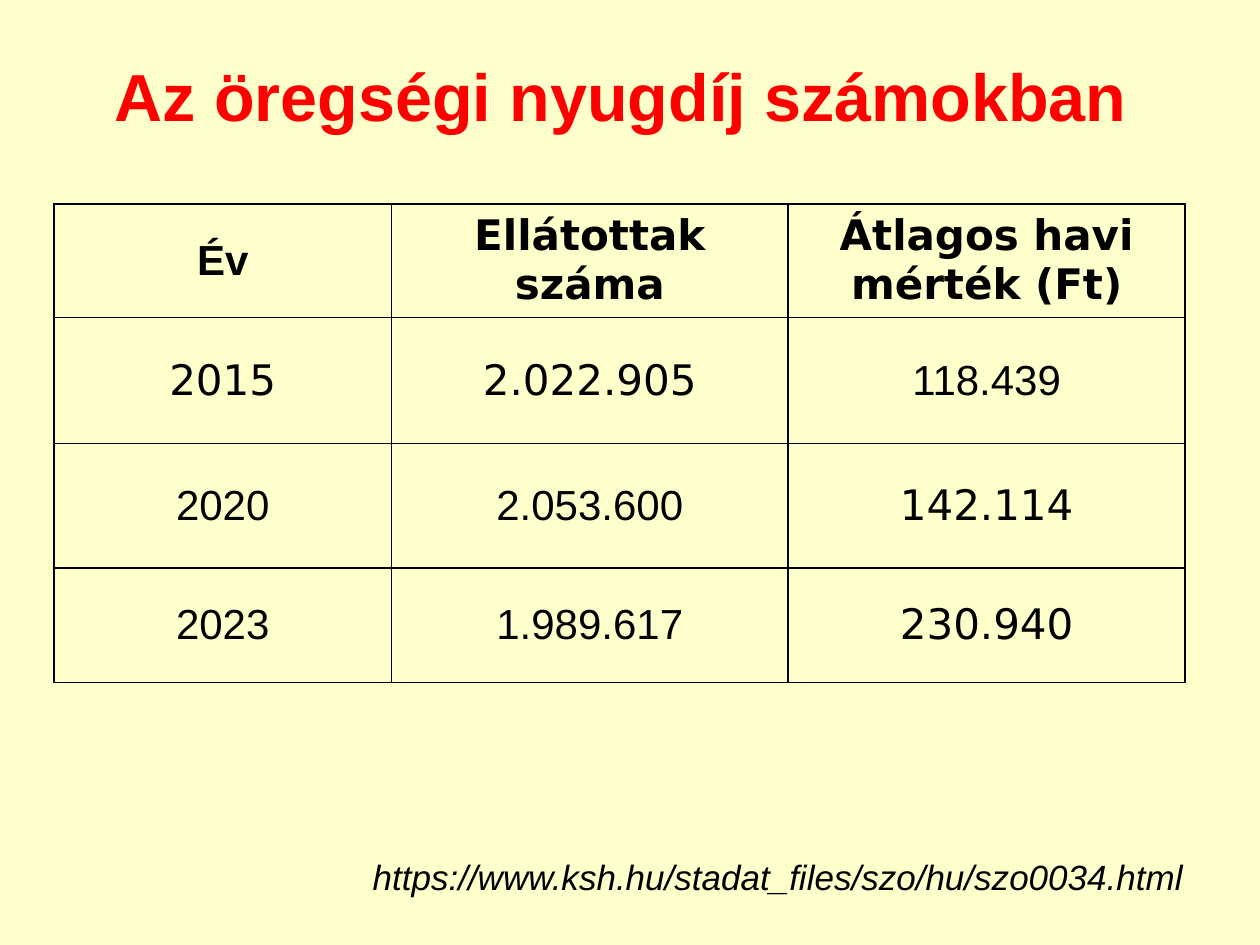
from lxml import etree
from pptx import Presentation
from pptx.dml.color import RGBColor
from pptx.enum.text import MSO_ANCHOR, PP_ALIGN
from pptx.oxml.ns import qn
from pptx.util import Cm, Pt

MIDDLE = MSO_ANCHOR.MIDDLE
CENTER, RIGHT = PP_ALIGN.CENTER, PP_ALIGN.RIGHT
TITLE_ONLY = 5
SANS, WIDE = "Arial", "DejaVu Sans"
COLORS = {"paper": "FFFFCC", "title": "FF0000", "ink": "000000"}
LEFT = 1.09
COLS = [6.8, 8, 8]
ROWS = [2.29, 2.54, 2.51, 2.31]
DATA = [
    [("Év", SANS), ("Ellátottak száma", WIDE), ("Átlagos havi mérték (Ft)", WIDE)],
    [("2015", WIDE), ("2.022.905", WIDE), ("118.439", SANS)],
    [("2020", SANS), ("2.053.600", SANS), ("142.114", WIDE)],
    [("2023", SANS), ("1.989.617", SANS), ("230.940", WIDE)],
]


class Deck:
    def __init__(self):
        self.file = Presentation()
        self.file.slide_width, self.file.slide_height = Cm(25.4), Cm(19.05)
        self.slide = self.file.slides.add_slide(self.file.slide_layouts[TITLE_ONLY])
        fill = self.slide.background.fill
        fill.solid()
        fill.fore_color.rgb = RGBColor.from_string(COLORS["paper"])

    def label(self, frame, text, size, align, face=SANS, color="ink", bold=False, italic=False):
        frame.word_wrap = True
        para = frame.paragraphs[0]
        para.text = text
        para.alignment = align
        font = para.font
        font.name, font.size = face, Pt(size)
        font.bold, font.italic = bold, italic
        font.color.rgb = RGBColor.from_string(COLORS[color])
        return para

    def title(self, text, *box):
        shape = self.slide.shapes.title
        shape.left, shape.top, shape.width, shape.height = map(Cm, box)
        shape.text_frame.vertical_anchor = MIDDLE
        self.label(shape.text_frame, text, 38, CENTER, color="title", bold=True)

    def border(self, cell):
        props = cell._tc.get_or_add_tcPr()
        for side in ("a:lnL", "a:lnR", "a:lnT", "a:lnB"):
            line = etree.SubElement(props, qn(side), w=str(Pt(1)))
            fill = etree.SubElement(line, qn("a:solidFill"))
            etree.SubElement(fill, qn("a:srgbClr"), val=COLORS["ink"])

    def table(self, data, left, top, cols, rows):
        box = map(Cm, (left, top, sum(cols), sum(rows)))
        grid = self.slide.shapes.add_table(len(rows), len(cols), *box).table
        grid.first_row = grid.horz_banding = False
        for col, width in zip(grid.columns, cols):
            col.width = Cm(width)
        for row, height in zip(grid.rows, rows):
            row.height = Cm(height)
        for r, line in enumerate(data):
            for c, (text, face) in enumerate(line):
                cell = grid.cell(r, c)
                cell.vertical_anchor = MIDDLE
                cell.margin_left = cell.margin_right = Cm(0.18)
                cell.margin_top = cell.margin_bottom = 0
                self.border(cell)
                cell.fill.background()
                self.label(cell.text_frame, text, 24, CENTER, face, bold=r == 0)

    def source(self, text, *box):
        shape = self.slide.shapes.add_textbox(*map(Cm, box))
        para = self.label(shape.text_frame, text, 20, RIGHT, italic=True)
        para.space_before, para.space_after = Pt(1), Pt(5)


def main():
    deck = Deck()
    deck.title("Az öregségi nyugdíj számokban", LEFT, 0.71, 22.86, 2.41)
    deck.table(DATA, LEFT, 4.11, COLS, ROWS)
    deck.source("https://www.ksh.hu/stadat_files/szo/hu/szo0034.html", 0.69, 17.12, 23.42, 1.19)
    deck.file.save("out.pptx")


if __name__ == "__main__":
    main()
